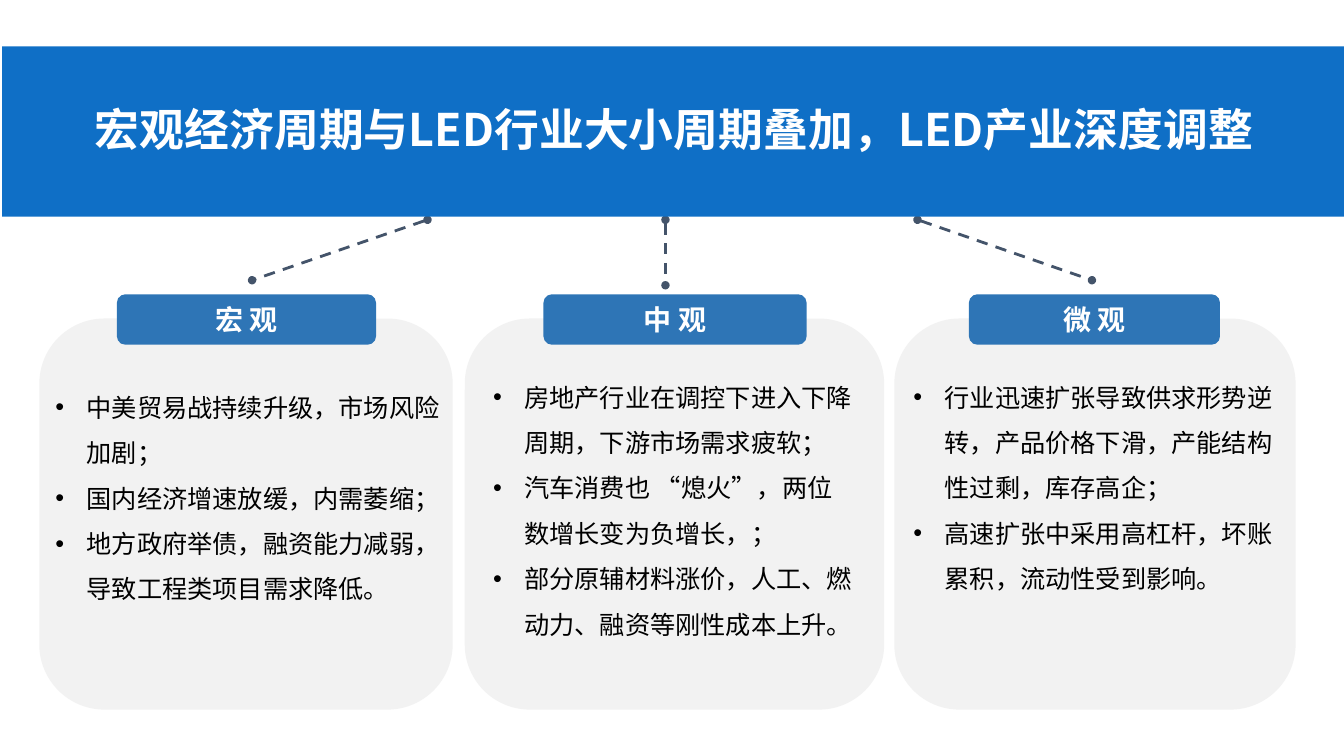
from dataclasses import dataclass

from lxml import etree
from pptx import Presentation
from pptx.dml.color import RGBColor
from pptx.enum.dml import MSO_LINE
from pptx.enum.lang import MSO_LANGUAGE_ID
from pptx.enum.shapes import MSO_CONNECTOR, MSO_SHAPE
from pptx.enum.text import MSO_ANCHOR, MSO_AUTO_SIZE, PP_ALIGN
from pptx.oxml.ns import qn
from pptx.util import Inches, Pt

RECTANGLE, ROUNDED = MSO_SHAPE.RECTANGLE, MSO_SHAPE.ROUNDED_RECTANGLE
STRAIGHT, DASH = MSO_CONNECTOR.STRAIGHT, MSO_LINE.DASH
TOP, MIDDLE = MSO_ANCHOR.TOP, MSO_ANCHOR.MIDDLE
LEFT, CENTER = PP_ALIGN.LEFT, PP_ALIGN.CENTER
NO_AUTOFIT = MSO_AUTO_SIZE.NONE
CHINESE = MSO_LANGUAGE_ID.SIMPLIFIED_CHINESE
COMPARISON_LAYOUT = 4

FONT = "Noto Sans CJK SC"
BAND_BLUE, LABEL_BLUE = "0F6FC6", "2E75B6"
CARD_GREY, LINK_SLATE = "F2F2F2", "44546A"
WHITE, BLACK = "FFFFFF", "000000"
CARD_TOP, CARD_HEIGHT = 3.16, 3.88
LABEL_TOP, LABEL_HEIGHT = 2.92, 0.5
BULLET_INDENT = 0.31


@dataclass
class Box:
    left: float
    top: float
    width: float
    height: float


@dataclass
class Column:
    heading: str
    card: tuple[float, float]  # left, width
    label: tuple[float, float]  # left, width
    list_box: Box
    link: tuple[float, float, float, float]  # from x, y, to x, y
    points: list[str]


TITLE = "宏观经济周期与LED行业大小周期叠加，LED产业深度调整"
COLUMNS = [
    Column("宏 观", (0.39, 4.1), (1.16, 2.57), Box(0.45, 3.69, 4.1, 2.37),
           (4.24, 2.18, 2.5, 2.78),
           ["中美贸易战持续升级，市场风险加剧；",
            "国内经济增速放缓，内需萎缩；",
            "地方政府举债，融资能力减弱，导致工程类项目需求降低。"]),
    Column("中 观", (4.61, 4.16), (5.39, 2.61), Box(4.79, 3.59, 3.79, 2.83),
           (6.6, 2.18, 6.6, 2.83),
           ["房地产行业在调控下进入下降周期，下游市场需求疲软；",
            "汽车消费也 “熄火”，两位数增长变为负增长，；",
            "部分原辅材料涨价，人工、燃动力、融资等刚性成本上升。"]),
    Column("微 观", (8.87, 3.98), (9.61, 2.49), Box(8.96, 3.59, 3.79, 2.37),
           (9.1, 2.18, 10.83, 2.78),
           ["行业迅速扩张导致供求形势逆转，产品价格下滑，产能结构性过剩，库存高企；",
            "高速扩张中采用高杠杆，坏账累积，流动性受到影响。"]),
]


def color(value: str) -> RGBColor:
    return RGBColor.from_string(value)


def write(shape, lines: list[str], *, size: float, fill: str, bold: bool = False,
          align=CENTER, anchor=MIDDLE, spacing: float = 1.0, bullet: bool = False) -> None:
    frame = shape.text_frame
    frame.word_wrap = True
    frame.auto_size = NO_AUTOFIT
    frame.vertical_anchor = anchor
    for index, line in enumerate(lines):
        para = frame.add_paragraph() if index else frame.paragraphs[0]
        para.alignment = align
        para.line_spacing = spacing
        para.space_before = Pt(0)
        if bullet:
            add_bullet(para)
        span = para.add_run()
        span.text = line
        font = span.font
        font.name, font.size, font.bold = FONT, Pt(size), bold
        font.language_id = CHINESE
        font.color.rgb = color(fill)
        etree.SubElement(span._r.get_or_add_rPr(), qn("a:ea"), typeface=FONT)


def add_bullet(para) -> None:
    properties = para._p.get_or_add_pPr()
    properties.set("marL", str(Inches(BULLET_INDENT)))
    properties.set("indent", str(-Inches(BULLET_INDENT)))
    etree.SubElement(properties, qn("a:buFont"), typeface="Arial")
    etree.SubElement(properties, qn("a:buChar"), char="•")


def add_block(page, kind, box: Box, fill: str):
    shape = page.shapes.add_shape(kind, Inches(box.left), Inches(box.top),
                                  Inches(box.width), Inches(box.height))
    shape.shadow.inherit = False
    shape.fill.solid()
    shape.fill.fore_color.rgb = color(fill)
    shape.line.fill.background()
    return shape


def add_link(page, ends: tuple[float, float, float, float]) -> None:
    link = page.shapes.add_connector(STRAIGHT, *(Inches(value) for value in ends))
    link.line.color.rgb = color(LINK_SLATE)
    link.line.width = Pt(2)
    link.line.dash_style = DASH
    outline = link.line._get_or_add_ln()
    for end in ("a:headEnd", "a:tailEnd"):
        etree.SubElement(outline, qn(end), type="oval")
    etree.SubElement(link._element.spPr, qn("a:effectLst"))


def place(page, holder, box: Box) -> None:
    """Position a placeholder and bring it to the front."""
    holder.left, holder.top = Inches(box.left), Inches(box.top)
    holder.width, holder.height = Inches(box.width), Inches(box.height)
    page.shapes._spTree.append(holder._element)


def add_column(page, column: Column, holder) -> None:
    card_left, card_width = column.card
    label_left, label_width = column.label
    add_block(page, ROUNDED, Box(card_left, CARD_TOP, card_width, CARD_HEIGHT), CARD_GREY)
    label = add_block(page, ROUNDED,
                      Box(label_left, LABEL_TOP, label_width, LABEL_HEIGHT), LABEL_BLUE)
    write(label, [column.heading], size=20, fill=WHITE, bold=True)
    place(page, holder, column.list_box)
    write(holder, column.points, size=18, fill=BLACK, align=LEFT, anchor=TOP,
          spacing=1.5, bullet=True)


def main() -> None:
    deck = Presentation()
    deck.slide_width, deck.slide_height = Inches(13.33), Inches(7.5)
    page = deck.slides.add_slide(deck.slide_layouts[COMPARISON_LAYOUT])
    title, *bodies = list(page.placeholders)

    # Dashed links from the band to the columns
    for column in COLUMNS:
        add_link(page, column.link)

    # Cards with label and list
    for column, holder in zip(COLUMNS, bodies):
        add_column(page, column, holder)
    for spare in bodies[len(COLUMNS):]:
        spare._element.getparent().remove(spare._element)

    # Title band
    add_block(page, RECTANGLE, Box(0.02, 0.46, 13.31, 1.69), BAND_BLUE)
    place(page, title, Box(0.45, 0.96, 12.47, 0.64))
    write(title, [TITLE], size=32, fill=WHITE, bold=True)

    deck.save("out.pptx")


if __name__ == "__main__":
    main()
